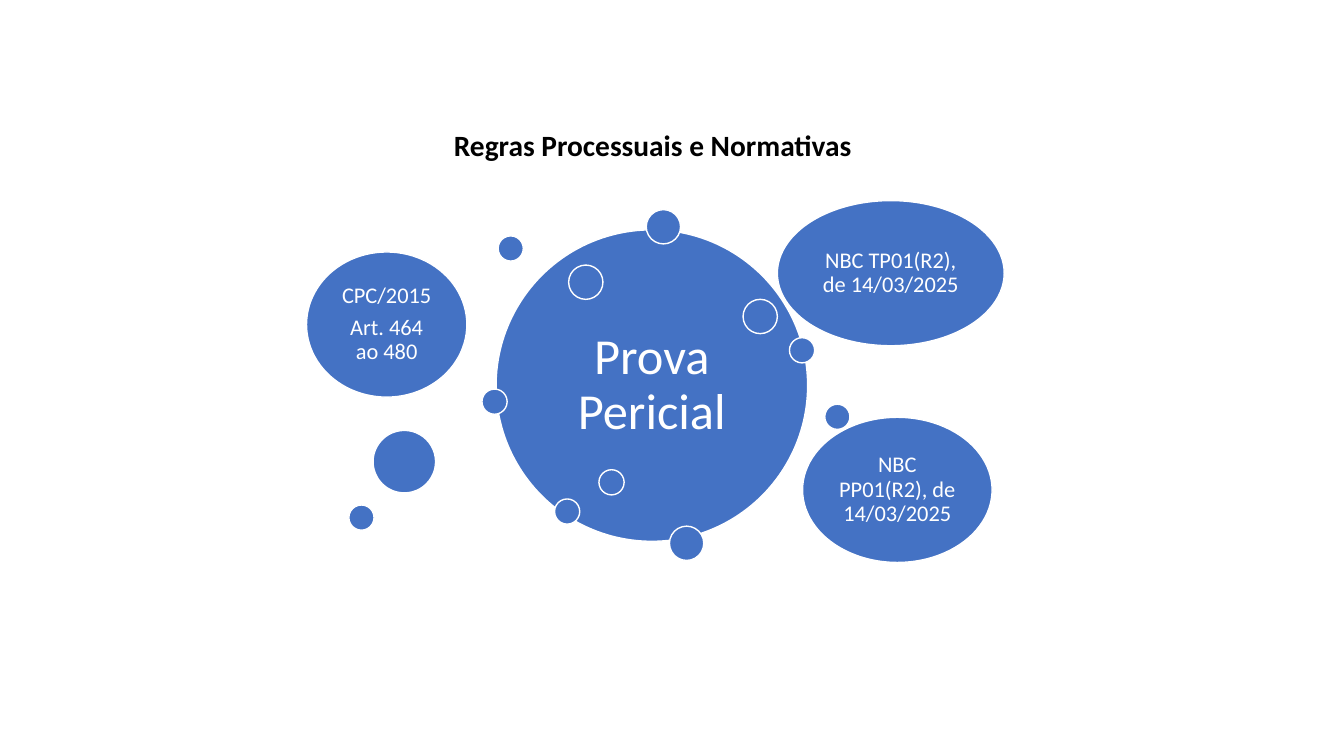
from dataclasses import dataclass

from pptx import Presentation
from pptx.dml.color import RGBColor
from pptx.enum.shapes import MSO_SHAPE as Shape
from pptx.enum.text import MSO_ANCHOR as Anchor, PP_ALIGN as Align
from pptx.shapes.group import GroupShape
from pptx.slide import Slide
from pptx.text.text import _Paragraph as Paragraph
from pptx.util import Inches, Pt

COLORS = {"blue": "4472C4", "white": "FFFFFF", "black": "000000"}
FONT = "Calibri"
SMALL, MEDIUM, LARGE = 0.25, 0.34, 0.62


@dataclass(frozen=True)
class Bubble:
    left: float
    top: float
    width: float
    height: float
    lines: tuple[str, ...] = ()
    size: float = 16
    inset: float = 0.07


def dot(left: float, top: float, diameter: float) -> Bubble:
    return Bubble(left, top, diameter, diameter)


BUBBLES = [
    Bubble(4.92, 2.28, 3.09, 3.09, ("Prova Pericial",), 36, 0.15),
    dot(6.41, 2.08, MEDIUM),
    dot(5.5, 4.95, SMALL),
    dot(7.83, 3.35, SMALL),
    dot(6.64, 5.22, MEDIUM),
    dot(4.94, 2.34, SMALL),
    dot(4.78, 3.86, SMALL),
    Bubble(3.04, 2.5, 1.59, 1.44, ("CPC/2015", "Art. 464 ao 480")),
    dot(5.64, 2.63, MEDIUM),
    dot(3.7, 4.27, LARGE),
    Bubble(7.71, 1.99, 2.25, 1.44, ("NBC TP01(R2), de 14/03/2025",)),
    dot(7.37, 2.97, MEDIUM),
    dot(3.46, 5.01, SMALL),
    dot(5.94, 4.66, SMALL),
    Bubble(7.96, 4.14, 1.88, 1.44, ("NBC PP01(R2), de 14/03/2025",)),
    dot(8.18, 4.01, SMALL),
]


def rgb(name: str) -> RGBColor:
    return RGBColor.from_string(COLORS[name])


def write(p: Paragraph, text: str, size: float, color: str, bold: bool = False) -> None:
    p.text = text
    p.alignment = Align.CENTER
    p.font.name = FONT
    p.font.size = Pt(size)
    p.font.bold = bold
    p.font.color.rgb = rgb(color)


def add_title(slide: Slide, text: str) -> None:
    box = slide.shapes.add_textbox(Inches(4.01), Inches(1.21), Inches(4.93), Inches(0.45))
    tf = box.text_frame
    tf.word_wrap = True
    write(tf.paragraphs[0], text, 21, "black", bold=True)


def add_bubble(group: GroupShape, bubble: Bubble) -> None:
    sp = group.shapes.add_shape(
        Shape.OVAL,
        Inches(bubble.left), Inches(bubble.top),
        Inches(bubble.width), Inches(bubble.height),
    )
    sp.shadow.inherit = False
    sp.fill.solid()
    sp.fill.fore_color.rgb = rgb("blue")
    sp.line.color.rgb = rgb("white")
    sp.line.width = Pt(1)

    tf = sp.text_frame
    tf.word_wrap = True
    tf.vertical_anchor = Anchor.MIDDLE
    tf.margin_left = tf.margin_right = Inches(bubble.inset)
    tf.margin_top = tf.margin_bottom = Inches(bubble.inset)
    for i, line in enumerate(bubble.lines):
        p = tf.add_paragraph() if i else tf.paragraphs[0]
        write(p, line, bubble.size, "white")
        p.line_spacing = 0.9
        if i:
            p.space_before = Pt(0.35 * bubble.size)


def main() -> None:
    prs = Presentation()
    prs.slide_width, prs.slide_height = Inches(13.33), Inches(7.5)
    s = prs.slides.add_slide(prs.slide_layouts[6])
    add_title(s, "Regras Processuais e Normativas")
    group = s.shapes.add_group_shape()
    for bubble in BUBBLES:
        add_bubble(group, bubble)
    prs.save("out.pptx")


if __name__ == "__main__":
    main()
